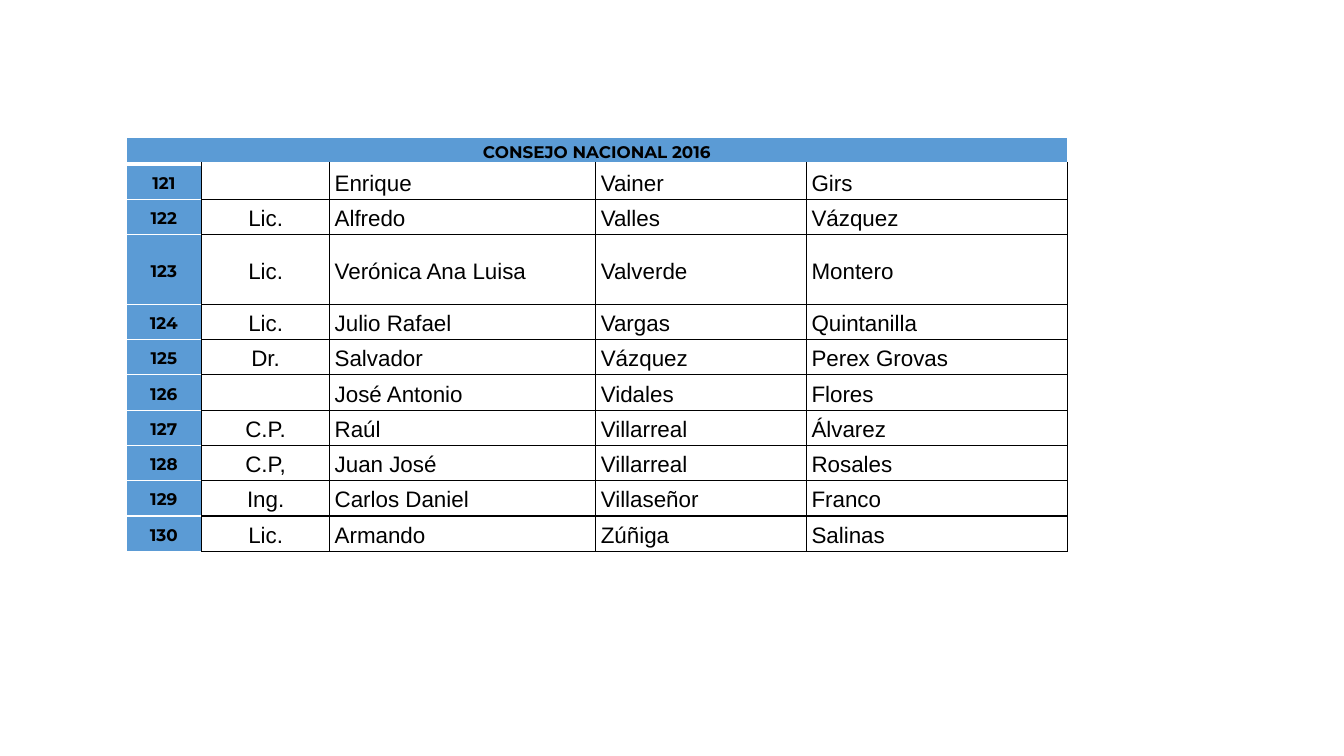
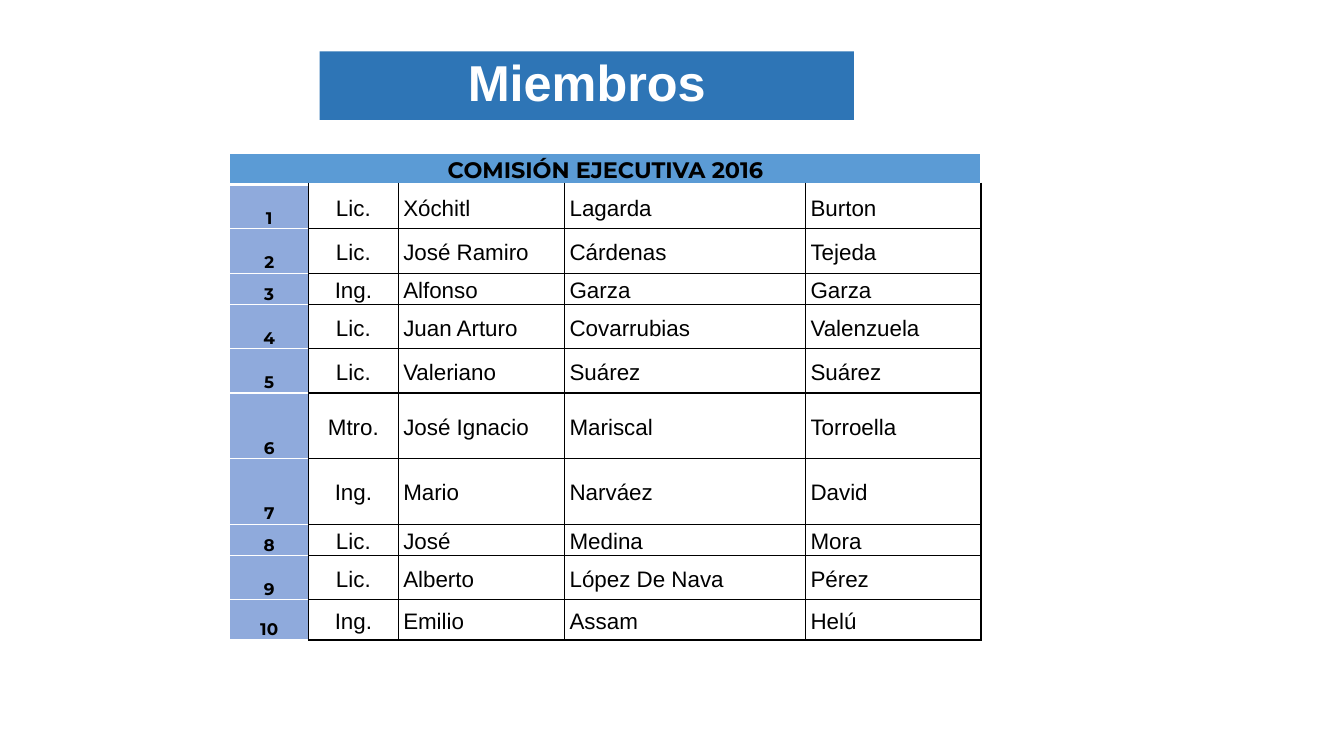
from lxml.etree import SubElement
from pptx import Presentation
from pptx.dml.color import RGBColor
from pptx.enum.text import MSO_ANCHOR, MSO_AUTO_SIZE, PP_ALIGN
from pptx.oxml.ns import qn
from pptx.util import Inches, Pt

BLACK, WHITE = "000000", "FFFFFF"
BLUE, DARK_BLUE, SOFT_BLUE = "5B9BD5", "2E75B6", "8FAADC"

TABLES = [
    {
        "title": None,
        "heading": "CONSEJO NACIONAL 2016",
        "heading_size": 12,
        "at": (1.25, 1.36),
        "cols": [0.75, 1.27, 2.64, 2.09, 2.59],
        "rows": [0.27, 0.35, 0.35, 0.69] + [0.35] * 7,
        "number_fill": BLUE,
        "number_anchor": MSO_ANCHOR.MIDDLE,
        "first": 121,
        "people": [
            ("", "Enrique", "Vainer", "Girs"),
            ("Lic.", "Alfredo", "Valles", "Vázquez"),
            ("Lic.", "Verónica Ana Luisa", "Valverde", "Montero"),
            ("Lic.", "Julio Rafael", "Vargas", "Quintanilla"),
            ("Dr.", "Salvador", "Vázquez", "Perex Grovas"),
            ("", "José Antonio", "Vidales", "Flores"),
            ("C.P.", "Raúl", "Villarreal", "Álvarez"),
            ("C.P,", "Juan José", "Villarreal", "Rosales"),
            ("Ing.", "Carlos Daniel", "Villaseñor", "Franco"),
            ("Lic.", "Armando", "Zúñiga", "Salinas"),
        ],
    },
    {
        "title": "Miembros",
        "heading": "COMISIÓN EJECUTIVA 2016",
        "heading_size": 16,
        "at": (2.28, 1.52),
        "cols": [0.78, 0.89, 1.65, 2.39, 1.74],
        "rows": [0.31, 0.44, 0.44, 0.31, 0.44, 0.44, 0.65, 0.65, 0.31, 0.44, 0.4],
        "number_fill": SOFT_BLUE,
        "number_anchor": MSO_ANCHOR.BOTTOM,
        "first": 1,
        "people": [
            ("Lic.", "Xóchitl", "Lagarda", "Burton"),
            ("Lic.", "José Ramiro", "Cárdenas", "Tejeda"),
            ("Ing.", "Alfonso", "Garza", "Garza"),
            ("Lic.", "Juan Arturo", "Covarrubias", "Valenzuela"),
            ("Lic.", "Valeriano", "Suárez", "Suárez"),
            ("Mtro.", "José Ignacio", "Mariscal", "Torroella"),
            ("Ing.", "Mario", "Narváez", "David"),
            ("Lic.", "José", "Medina", "Mora"),
            ("Lic.", "Alberto", "López De Nava", "Pérez"),
            ("Ing.", "Emilio", "Assam", "Helú"),
        ],
    },
]


def rgb(value):
    return RGBColor.from_string(value)


def format_cell(cell, text, font, size, bold, align, anchor, fill, borders):
    cell.margin_left = cell.margin_right = Inches(0.05)
    cell.margin_top = cell.margin_bottom = 0
    cell.vertical_anchor = anchor
    p = cell.text_frame.paragraphs[0]
    if text:
        p.text = text
    p.alignment = align
    p.line_spacing = 1.15
    p.font.name = font
    p.font.size = Pt(size)
    p.font.bold = bold
    p.font.color.rgb = rgb(BLACK)
    tcPr = cell._tc.get_or_add_tcPr()
    for side, (color, width) in zip("LRTB", borders):
        ln = SubElement(tcPr, qn(f"a:ln{side}"), w=str(Pt(width)))
        SubElement(SubElement(ln, qn("a:solidFill")), qn("a:srgbClr"), val=color)
    if fill:
        cell.fill.solid()
        cell.fill.fore_color.rgb = rgb(fill)
    else:
        cell.fill.background()


prs = Presentation()
prs.slide_width, prs.slide_height = Inches(13.33), Inches(7.5)
black, white, thick = (BLACK, 1), (WHITE, 1), (WHITE, 3)

for spec_table in TABLES:
    title = spec_table["title"]
    s = prs.slides.add_slide(prs.slide_layouts[5 if title else 6])
    if title:
        sp = s.shapes.title
        sp.left, sp.top = Inches(3.17), Inches(0.51)
        sp.width, sp.height = Inches(5.3), Inches(0.68)
        sp.fill.solid()
        sp.fill.fore_color.rgb = rgb(DARK_BLUE)
        tf = sp.text_frame
        tf.auto_size = MSO_AUTO_SIZE.NONE
        tf.vertical_anchor = MSO_ANCHOR.MIDDLE
        tf.margin_left = tf.margin_right = Inches(0.1)
        tf.margin_top = tf.margin_bottom = Inches(0.1)
        p = tf.paragraphs[0]
        p.text = title
        p.alignment = PP_ALIGN.CENTER
        p.line_spacing = 0.9
        p.font.name = "Arial"
        p.font.size = Pt(36)
        p.font.bold = True
        p.font.color.rgb = rgb(WHITE)

    cols, rows = spec_table["cols"], spec_table["rows"]
    left, top = spec_table["at"]
    table = s.shapes.add_table(
        len(rows), len(cols), Inches(left), Inches(top),
        Inches(sum(cols)), Inches(sum(rows)),
    ).table
    table.first_row = table.horz_banding = False
    for column, width in zip(table.columns, cols):
        column.width = Inches(width)
    for row, height in zip(table.rows, rows):
        row.height = Inches(height)

    anchor = spec_table["number_anchor"]
    table.cell(0, 0).merge(table.cell(0, len(cols) - 1))
    for j in range(len(cols)):
        format_cell(table.cell(0, j), "" if j else spec_table["heading"],
                    "Montserrat", spec_table["heading_size"], True,
                    PP_ALIGN.CENTER, anchor, BLUE, (white, white, white, thick))

    for i, person in enumerate(spec_table["people"], 1):
        number = str(spec_table["first"] + i - 1)
        format_cell(table.cell(i, 0), number, "Montserrat", 12, True,
                    PP_ALIGN.CENTER, anchor, spec_table["number_fill"],
                    (white, black, thick if i == 1 else white, white))
        for j, text in enumerate(person, 1):
            align = PP_ALIGN.CENTER if j == 1 else PP_ALIGN.LEFT
            format_cell(table.cell(i, j), text, "Arial", 16, False,
                        align, MSO_ANCHOR.MIDDLE, None,
                        (black, black, thick if i == 1 else black, black))

prs.save("out.pptx")
